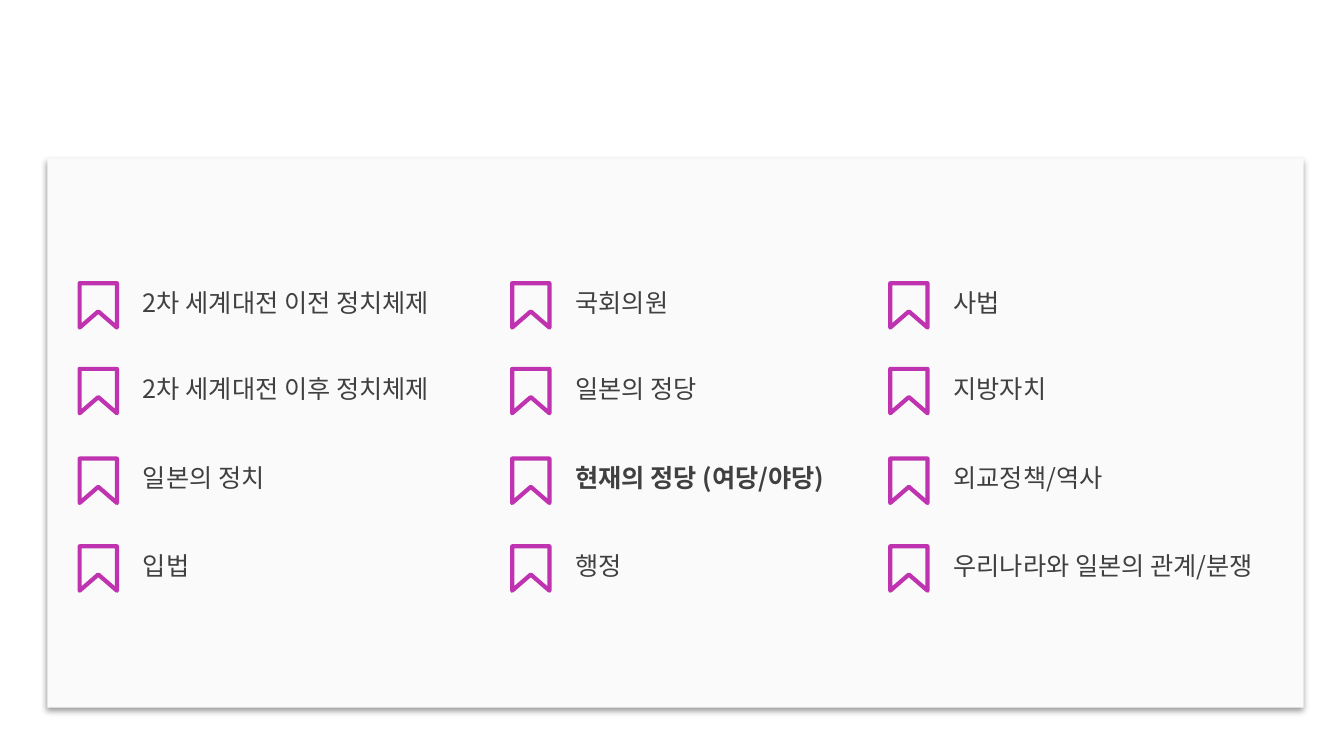
import pptx
import pptx.dml.color
import pptx.enum.shapes
import pptx.oxml
import pptx.oxml.ns
import pptx.util
from pptx.util import Inches

FONT = "Noto Sans CJK KR"
ROW_TOPS = [2.81, 3.66, 4.55, 5.42]
TOPIC_COLUMNS = {
    0.79: ["2차 세계대전 이전 정치체제", "2차 세계대전 이후 정치체제", "일본의 정치", "입법"],
    5.08: ["국회의원", "일본의 정당", "현재의 정당 (여당/야당)", "행정"],
    8.83: ["사법", "지방자치", "외교정책/역사", "우리나라와 일본의 관계/분쟁"],
}
CURRENT_TOPIC = "현재의 정당 (여당/야당)"


def rgb(hex_code):
    return pptx.dml.color.RGBColor.from_string(hex_code)


def add_panel(slide):
    """Add the pale panel with its soft shadow below."""
    panel = slide.shapes.add_shape(
        pptx.enum.shapes.MSO_SHAPE.RECTANGLE,
        Inches(0.47), Inches(1.57), Inches(12.46), Inches(5.45))
    panel.fill.solid()
    panel.fill.fore_color.rgb = rgb("FAFAFA")
    panel.line.fill.background()
    panel.shadow.inherit = False
    effects = panel._element.spPr.find(pptx.oxml.ns.qn("a:effectLst"))
    effects.append(pptx.oxml.parse_xml(
        f'<a:outerShdw {pptx.oxml.ns.nsdecls("a")} blurRad="{pptx.util.Pt(4)}" '
        f'dist="{pptx.util.Pt(3)}" dir="5400000" algn="t" rotWithShape="0">'
        '<a:srgbClr val="000000"><a:alpha val="40000"/></a:srgbClr></a:outerShdw>'))


def add_bookmark(slide, left, top):
    width, height, notch = 0.37, 0.44, 0.28
    outline = slide.shapes.build_freeform(Inches(left), Inches(top))
    outline.add_line_segments([
        (Inches(left + width), Inches(top)),
        (Inches(left + width), Inches(top + height)),
        (Inches(left + width / 2), Inches(top + notch)),
        (Inches(left), Inches(top + height)),
    ], close=True)
    bookmark = outline.convert_to_shape()
    bookmark.fill.background()
    bookmark.line.color.rgb = rgb("BF33B0")
    bookmark.line.width = pptx.util.Pt(3)
    bookmark.line._get_or_add_ln().append(
        pptx.oxml.parse_xml(f'<a:round {pptx.oxml.ns.nsdecls("a")}/>'))
    bookmark.shadow.inherit = False


def add_topic(slide, left, top, topic):
    label = slide.shapes.add_textbox(Inches(left), Inches(top), Inches(3.5), Inches(0.4))
    label.text_frame.word_wrap = True
    label.text_frame.text = topic
    run = label.text_frame.paragraphs[0].runs[0]
    run.font.size = pptx.util.Pt(18)
    run.font.bold = topic == CURRENT_TOPIC
    run.font.color.rgb = rgb("404040")
    run.font.name = FONT
    run.font._element.append(pptx.oxml.parse_xml(
        f'<a:ea {pptx.oxml.ns.nsdecls("a")} typeface="{FONT}"/>'))


def main():
    deck = pptx.Presentation()
    deck.slide_width, deck.slide_height = Inches(13.33), Inches(7.5)
    slide = deck.slides.add_slide(deck.slide_layouts[6])
    add_panel(slide)
    for left, topics in TOPIC_COLUMNS.items():
        for top, topic in zip(ROW_TOPS, topics):
            add_bookmark(slide, left, top)
            add_topic(slide, left + 0.53, top - 0.01, topic)
    deck.save("out.pptx")


if __name__ == "__main__":
    main()
